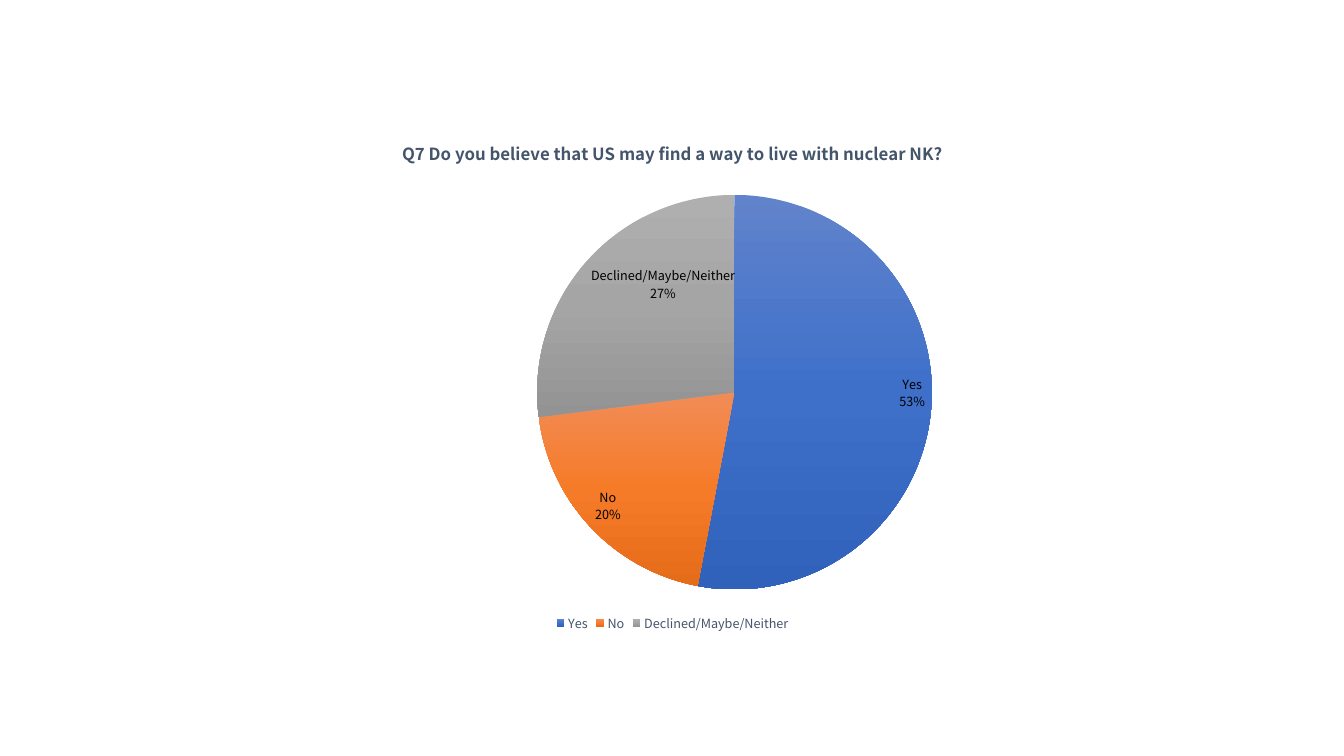
from copy import deepcopy
from dataclasses import dataclass

from lxml.etree import SubElement
from pptx import Presentation
from pptx.chart.chart import Chart
from pptx.chart.data import CategoryChartData
from pptx.dml.color import RGBColor
from pptx.enum.chart import XL_CHART_TYPE, XL_LABEL_POSITION, XL_LEGEND_POSITION
from pptx.oxml.ns import qn
from pptx.slide import Slide
from pptx.text.text import Font
from pptx.util import Inches, Pt

SLIDE_WIDTH, SLIDE_HEIGHT = Inches(13.33), Inches(7.5)
FONT_NAME = "Noto Sans CJK KR"
QUESTION = "Q7 Do you believe that US may find a way to live with nuclear NK?"
COLORS = {
    "heading": "44546A",
    "label": "000000",
    "yes_top": "6183CB",
    "yes_middle": "3E70CA",
    "yes_bottom": "3062BB",
    "no_top": "F18C57",
    "no_middle": "F67B28",
    "no_bottom": "E56C19",
    "declined_top": "AFAFAF",
    "declined_middle": "A5A5A5",
    "declined_bottom": "939393",
}


@dataclass(frozen=True)
class Answer:
    wording: str
    percent: int
    tint: str


@dataclass(frozen=True)
class Area:
    x: float
    y: float
    w: float
    h: float


ANSWERS = [
    Answer("Yes", 53, "yes"),
    Answer("No", 20, "no"),
    Answer("Declined/Maybe/Neither", 27, "declined"),
]
CHART_AREA = Area(0.1605, 0.1587, 0.6797, 0.6827)
PIE_AREA = Area(0.352, 0.145, 0.432, 0.765)


def style_font(font: Font, size: float, color: str, bold: bool = False) -> None:
    font.name = FONT_NAME
    font.size = Pt(size)
    font.bold = bold
    font.color.rgb = RGBColor.from_string(COLORS[color])


def add_poll_chart(slide: Slide, area: Area) -> Chart:
    poll = CategoryChartData()
    poll.categories = [answer.wording for answer in ANSWERS]
    poll.add_series(QUESTION, [answer.percent for answer in ANSWERS])
    chart = slide.shapes.add_chart(
        XL_CHART_TYPE.PIE,
        round(area.x * SLIDE_WIDTH),
        round(area.y * SLIDE_HEIGHT),
        round(area.w * SLIDE_WIDTH),
        round(area.h * SLIDE_HEIGHT),
        poll,
    ).chart
    style_font(chart.font, 10, "label")
    return chart


def add_question(chart: Chart) -> None:
    chart.has_title = True
    chart.chart_title.include_in_layout = False
    question = chart.chart_title.text_frame.paragraphs[0].add_run()
    question.text = QUESTION
    style_font(question.font, 12, "heading", bold=True)


def add_legend(chart: Chart) -> None:
    chart.has_legend = True
    chart.legend.position = XL_LEGEND_POSITION.BOTTOM
    chart.legend.include_in_layout = False
    style_font(chart.legend.font, 9, "heading")


def add_labels(chart: Chart) -> None:
    plot = chart.plots[0]
    plot.vary_by_categories = True
    plot.has_data_labels = True
    labels = plot.data_labels
    labels.show_category_name = True
    labels.show_percentage = True
    labels.show_value = False
    labels.number_format = "0%"
    labels.number_format_is_linked = False
    labels.position = XL_LABEL_POSITION.INSIDE_END
    style_font(labels.font, 9, "label")


def shade_slices(chart: Chart) -> None:
    slices = chart.plots[0].series[0].points
    for index, answer in enumerate(ANSWERS):
        fill = slices[index].format.fill
        fill.gradient()
        fill.gradient_angle = 270
        stop_list = chart.element.xpath(".//a:gsLst")[-1]
        stop_list.append(deepcopy(stop_list[0]))
        for level, stop in zip(("top", "middle", "bottom"), fill.gradient_stops):
            stop.color.rgb = RGBColor.from_string(COLORS[f"{answer.tint}_{level}"])
        for position, stop in zip((0, 0.5, 1), fill.gradient_stops):
            stop.position = position


def place_pie(chart: Chart, area: Area) -> None:
    plot_area = chart.element.xpath(".//c:plotArea")[0]
    for automatic in plot_area.findall(qn("c:layout")):
        plot_area.remove(automatic)
    layout = SubElement(plot_area, qn("c:layout"))
    plot_area.insert(0, layout)
    manual = SubElement(layout, qn("c:manualLayout"))
    settings = {
        "layoutTarget": "inner",
        "xMode": "edge",
        "yMode": "edge",
        "x": area.x,
        "y": area.y,
        "w": area.w,
        "h": area.h,
    }
    for tag, value in settings.items():
        SubElement(manual, qn(f"c:{tag}")).set("val", str(value))


def main() -> None:
    deck = Presentation()
    deck.slide_width, deck.slide_height = SLIDE_WIDTH, SLIDE_HEIGHT
    slide = deck.slides.add_slide(deck.slide_layouts[6])
    chart = add_poll_chart(slide, CHART_AREA)
    add_question(chart)
    add_legend(chart)
    add_labels(chart)
    shade_slices(chart)
    place_pie(chart, PIE_AREA)
    deck.save("out.pptx")


if __name__ == "__main__":
    main()
